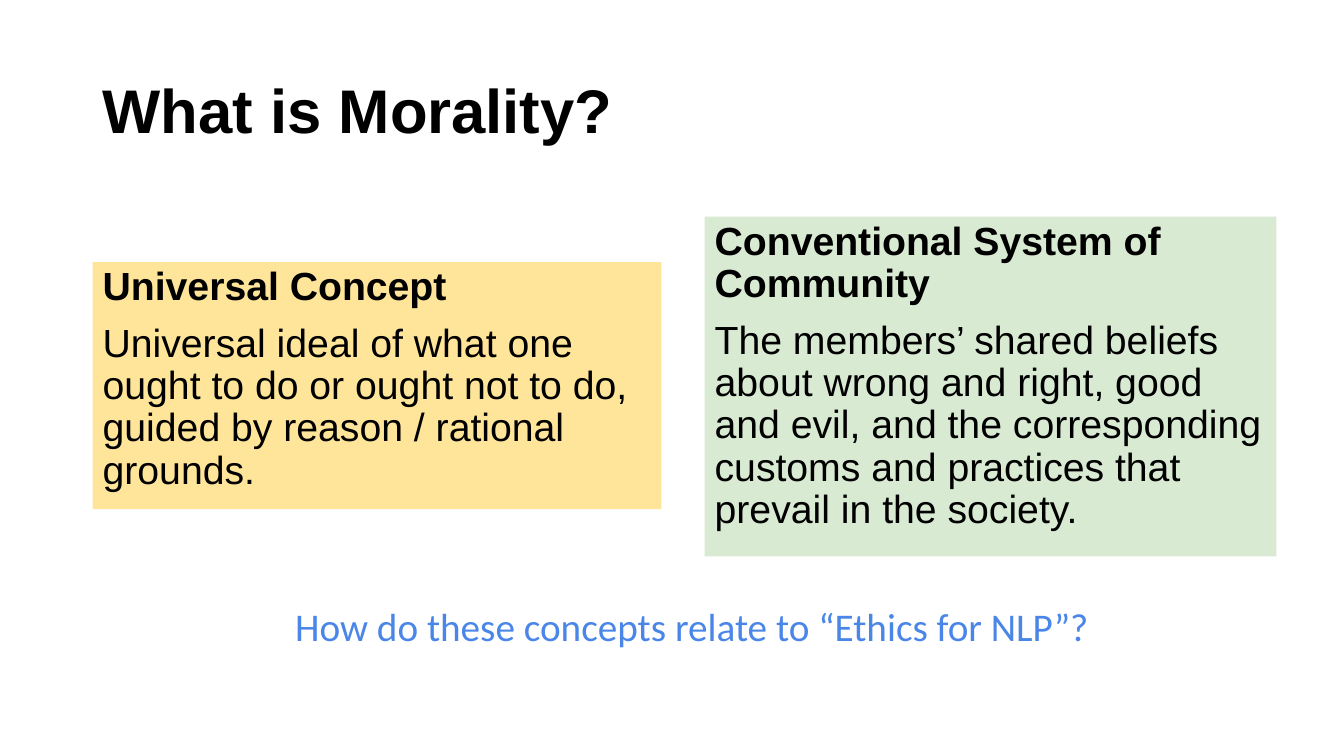
"""Build a slide that contrasts two concepts of morality."""
from dataclasses import dataclass

import pptx
import pptx.dml.color
import pptx.enum.shapes
import pptx.enum.text
import pptx.util
from pptx.util import Inches


@dataclass(frozen=True)
class Theme:
    """Hold the fonts, type sizes and colours of the slide."""
    main_font: str = "Arial"
    question_font: str = "Calibri"
    title_size: int = 44
    text_size: int = 28
    ink: str = "000000"
    question: str = "4A86E8"
    universal: str = "FFE599"
    community: str = "D9EAD3"


THEME = Theme()


def color(value):
    """Turn a hex string into a colour."""
    return pptx.dml.color.RGBColor.from_string(value)


def set_frame(frame, anchor, inset):
    """Set wrapping, anchor and insets of a text frame."""
    frame.word_wrap = True
    frame.vertical_anchor = anchor
    frame.margin_left = frame.margin_right = Inches(0.1)
    frame.margin_top = frame.margin_bottom = Inches(inset)


def style_paragraph(para, size, ink, font, bold=False, before=10):
    """Format a paragraph and its runs."""
    para.alignment = pptx.enum.text.PP_ALIGN.LEFT
    para.line_spacing = 0.9
    para.space_before = pptx.util.Pt(before)
    for span in para.runs:
        span.font.name = font
        span.font.size = pptx.util.Pt(size)
        span.font.bold = bold
        span.font.color.rgb = color(ink)


def set_title(page, text):
    """Fill, place and format the title placeholder."""
    title = page.shapes.title
    title.left, title.top = Inches(0.92), Inches(0.4)
    title.width, title.height = Inches(11.5), Inches(1.45)
    frame = title.text_frame
    frame.text = text
    frame.auto_size = pptx.enum.text.MSO_AUTO_SIZE.NONE
    set_frame(frame, pptx.enum.text.MSO_ANCHOR.MIDDLE, 0.05)
    style_paragraph(frame.paragraphs[0], THEME.title_size, THEME.ink,
                    THEME.main_font, bold=True, before=0)


def add_concept(page, left, top, width, height, fill, heading, body):
    """Add a filled card with a bold heading and a description."""
    card = page.shapes.add_shape(
        pptx.enum.shapes.MSO_SHAPE.RECTANGLE,
        Inches(left), Inches(top), Inches(width), Inches(height))
    card.shadow.inherit = False
    card.fill.solid()
    card.fill.fore_color.rgb = color(fill)
    card.line.fill.background()
    frame = card.text_frame
    frame.text = f"{heading}\n{body}"
    set_frame(frame, pptx.enum.text.MSO_ANCHOR.TOP, 0.05)
    for para, bold in zip(frame.paragraphs, (True, False)):
        style_paragraph(para, THEME.text_size, THEME.ink, THEME.main_font, bold)


def add_question(page, text):
    """Add the closing question."""
    box = page.shapes.add_textbox(
        Inches(2.83), Inches(5.93), Inches(8.7), Inches(0.63))
    frame = box.text_frame
    frame.text = text
    set_frame(frame, pptx.enum.text.MSO_ANCHOR.TOP, 0.1)
    frame.auto_size = pptx.enum.text.MSO_AUTO_SIZE.SHAPE_TO_FIT_TEXT
    style_paragraph(frame.paragraphs[0], THEME.text_size, THEME.question,
                    THEME.question_font)


def main():
    """Build and save the deck."""
    deck = pptx.Presentation()
    deck.slide_width, deck.slide_height = Inches(13.33), Inches(7.5)
    page = deck.slides.add_slide(deck.slide_layouts.get_by_name("Title Only"))
    set_title(page, "What is Morality?")
    add_concept(page, 0.92, 2.6, 5.64, 2.45, THEME.universal,
                "Universal Concept",
                "Universal ideal of what one ought to do or ought not to do, "
                "guided by reason / rational grounds.")
    add_concept(page, 6.99, 2.15, 5.67, 3.37, THEME.community,
                "Conventional System of Community",
                "The members’ shared beliefs about wrong and right, good and "
                "evil, and the corresponding customs and practices that "
                "prevail in the society.")
    add_question(page, "How do these concepts relate to “Ethics for NLP”?")
    deck.save("out.pptx")


if __name__ == "__main__":
    main()
